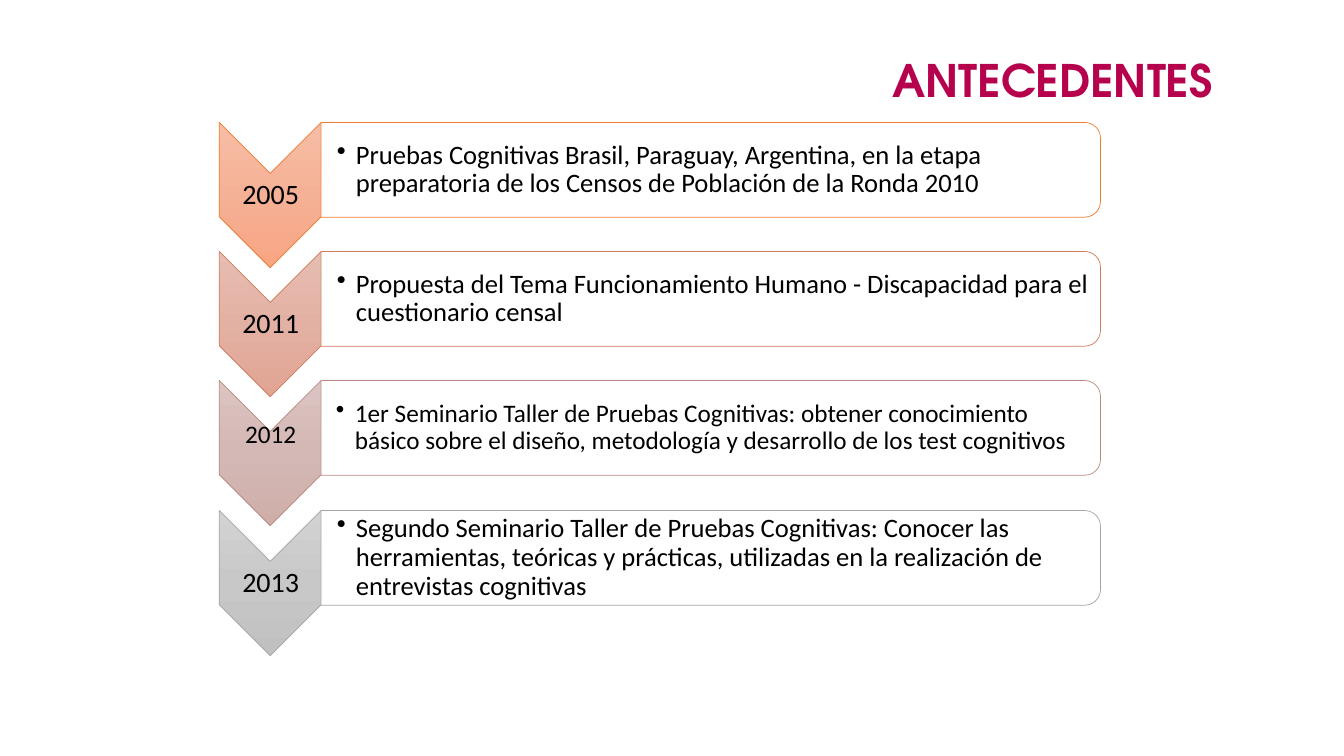
from dataclasses import dataclass

from pptx import Presentation
from pptx.dml.color import RGBColor
from pptx.enum.shapes import MSO_SHAPE
from pptx.enum.text import MSO_ANCHOR, PP_ALIGN
from pptx.oxml import parse_xml
from pptx.oxml.ns import qn
from pptx.shapes.autoshape import Shape
from pptx.shapes.shapetree import GroupShapes
from pptx.slide import Slide
from pptx.text.text import TextFrame, _Paragraph
from pptx.util import Pt

CHEVRON = MSO_SHAPE.CHEVRON
ROUNDED_TOP = MSO_SHAPE.ROUND_2_SAME_RECTANGLE
MIDDLE = MSO_ANCHOR.MIDDLE
CENTER, RIGHT = PP_ALIGN.CENTER, PP_ALIGN.RIGHT
EMU_PER_PX = 9144
DRAWING_NS = "http://schemas.openxmlformats.org/drawingml/2006/main"

CHEVRON_LEFT, CHEVRON_WIDTH, CHEVRON_HEIGHT = 218, 101, 144
PANEL_LEFT, PANEL_WIDTH, PANEL_HEIGHT = 319, 773, 94
FIRST_TOP, LAST_TOP = 121, 506


@dataclass(frozen=True)
class Theme:
    title_font: str = "TeX Gyre Adventor"
    body_font: str = "Calibri"
    title_color: str = "B6014C"
    text_color: str = "000000"
    panel_color: str = "FFFFFF"
    title_size: int = 32
    line_width: float = 0.5
    line_spacing: float = 0.9


@dataclass(frozen=True)
class Box:
    left: int
    top: int
    width: int
    height: int


@dataclass(frozen=True)
class Milestone:
    year: str
    description: str
    gradient: tuple[str, str, str]
    line_color: str
    year_size: int = 20
    text_size: int = 19
    text_inset: int = 15
    year_bottom_inset: int = 1


THEME = Theme()
MILESTONES = (
    Milestone("2005", "Pruebas Cognitivas Brasil, Paraguay, Argentina, en la etapa "
              "preparatoria de los Censos de Población de la Ronda 2010",
              ("F7BDA5", "F5B196", "F8A582"), "ED7D31"),
    Milestone("2011", "Propuesta del Tema Funcionamiento Humano - Discapacidad para el "
              "cuestionario censal",
              ("E7BDB1", "E2B1A3", "E1A493"), "D17B5C"),
    Milestone("2012", "1er Seminario Taller de Pruebas Cognitivas: obtener conocimiento "
              "básico sobre el diseño, metodología y desarrollo de los test cognitivos",
              ("DBC4C1", "D3B8B5", "CFAEA9"), "B98A82",
              year_size=18, text_size=18, text_inset=14, year_bottom_inset=36),
    Milestone("2013", "Segundo Seminario Taller de Pruebas Cognitivas: Conocer las "
              "herramientas, teóricas y prácticas, utilizadas en la realización de "
              "entrevistas cognitivas",
              ("D2D2D2", "C8C8C8", "C0C0C0"), "A5A5A5"),
)


def px(length: int) -> int:
    return length * EMU_PER_PX


def frame(box: Box) -> tuple[int, int, int, int]:
    return px(box.left), px(box.top), px(box.width), px(box.height)


def add_turned_shape(shapes: GroupShapes, kind: MSO_SHAPE, box: Box, line_color: str) -> Shape:
    """Add a shape turned a quarter clockwise that covers the given box."""
    shift = (box.width - box.height) // 2
    unturned = Box(box.left + shift, box.top - shift, box.height, box.width)
    shape = shapes.add_shape(kind, *frame(unturned))
    shape.rotation = 90
    shape.shadow.inherit = False
    shape.line.color.rgb = RGBColor.from_string(line_color)
    shape.line.width = Pt(THEME.line_width)
    return shape


def fill_gradient(shape: Shape, colors: tuple[str, str, str]) -> None:
    """Fill from top to bottom, whatever the rotation of the shape."""
    stops = "".join(
        f'<a:gs pos="{index * 50000}"><a:srgbClr val="{color}"/></a:gs>'
        for index, color in enumerate(colors))
    gradient = parse_xml(
        f'<a:gradFill xmlns:a="{DRAWING_NS}" rotWithShape="0"><a:gsLst>{stops}</a:gsLst>'
        '<a:lin ang="5400000" scaled="0"/></a:gradFill>')
    shape.fill.solid()
    solid = shape.element.spPr.find(qn("a:solidFill"))
    solid.getparent().replace(solid, gradient)


def fill_panel(shape: Shape) -> None:
    shape.fill.solid()
    shape.fill.fore_color.rgb = RGBColor.from_string(THEME.panel_color)
    color = shape.element.spPr.find(qn("a:solidFill")).find(qn("a:srgbClr"))
    color.append(parse_xml(f'<a:alpha xmlns:a="{DRAWING_NS}" val="90000"/>'))


def add_text_frame(shapes: GroupShapes, box: Box, left_inset: int = 1,
                   bottom_inset: int = 1) -> TextFrame:
    text_frame = shapes.add_textbox(*frame(box)).text_frame
    text_frame.word_wrap = True
    text_frame.vertical_anchor = MIDDLE
    text_frame.margin_left = px(left_inset)
    text_frame.margin_bottom = px(bottom_inset)
    text_frame.margin_top = text_frame.margin_right = px(1)
    return text_frame


def add_span(para: _Paragraph, text: str, size: int, font: str = THEME.body_font,
             color: str = THEME.text_color, bold: bool = False) -> None:
    para.line_spacing = THEME.line_spacing
    span = para.add_run()
    span.text = text
    span.font.name = font
    span.font.size = Pt(size)
    span.font.bold = bold
    span.font.color.rgb = RGBColor.from_string(color)


def add_bullet(para: _Paragraph) -> None:
    para.level = 1
    properties = para._p.get_or_add_pPr()
    properties.set("marL", str(px(19)))
    properties.set("indent", str(px(-19)))
    properties.append(parse_xml(f'<a:buChar xmlns:a="{DRAWING_NS}" char="•"/>'))


def add_milestone(shapes: GroupShapes, milestone: Milestone, top: int) -> None:
    chevron_box = Box(CHEVRON_LEFT, top, CHEVRON_WIDTH, CHEVRON_HEIGHT)
    chevron = add_turned_shape(shapes, CHEVRON, chevron_box, milestone.line_color)
    fill_gradient(chevron, milestone.gradient)
    year_box = Box(CHEVRON_LEFT, top + 51, CHEVRON_WIDTH, 43)
    year = add_text_frame(shapes, year_box, bottom_inset=milestone.year_bottom_inset)
    year.paragraphs[0].alignment = CENTER
    add_span(year.paragraphs[0], milestone.year, milestone.year_size)

    panel_box = Box(PANEL_LEFT, top, PANEL_WIDTH, PANEL_HEIGHT)
    fill_panel(add_turned_shape(shapes, ROUNDED_TOP, panel_box, milestone.line_color))
    description_box = Box(PANEL_LEFT, top + 5, PANEL_WIDTH - 4, 85)
    description = add_text_frame(shapes, description_box, milestone.text_inset)
    add_bullet(description.paragraphs[0])
    add_span(description.paragraphs[0], milestone.description, milestone.text_size)


def add_title(page: Slide) -> None:
    title = page.shapes.title
    title.left, title.top, title.width, title.height = frame(Box(63, 10, 1150, 145))
    title.text_frame.vertical_anchor = MIDDLE
    para = title.text_frame.paragraphs[0]
    para.alignment = RIGHT
    add_span(para, "ANTECEDENTES", THEME.title_size, THEME.title_font,
             THEME.title_color, bold=True)


def main() -> None:
    deck = Presentation()
    deck.slide_width, deck.slide_height = px(1333), px(750)
    page = deck.slides.add_slide(deck.slide_layouts.get_by_name("Title Only"))
    timeline = page.shapes.add_group_shape()
    for index, milestone in enumerate(MILESTONES):
        top = FIRST_TOP + index * (LAST_TOP - FIRST_TOP) // (len(MILESTONES) - 1)
        add_milestone(timeline.shapes, milestone, top)
    add_title(page)
    deck.save("out.pptx")


if __name__ == "__main__":
    main()
